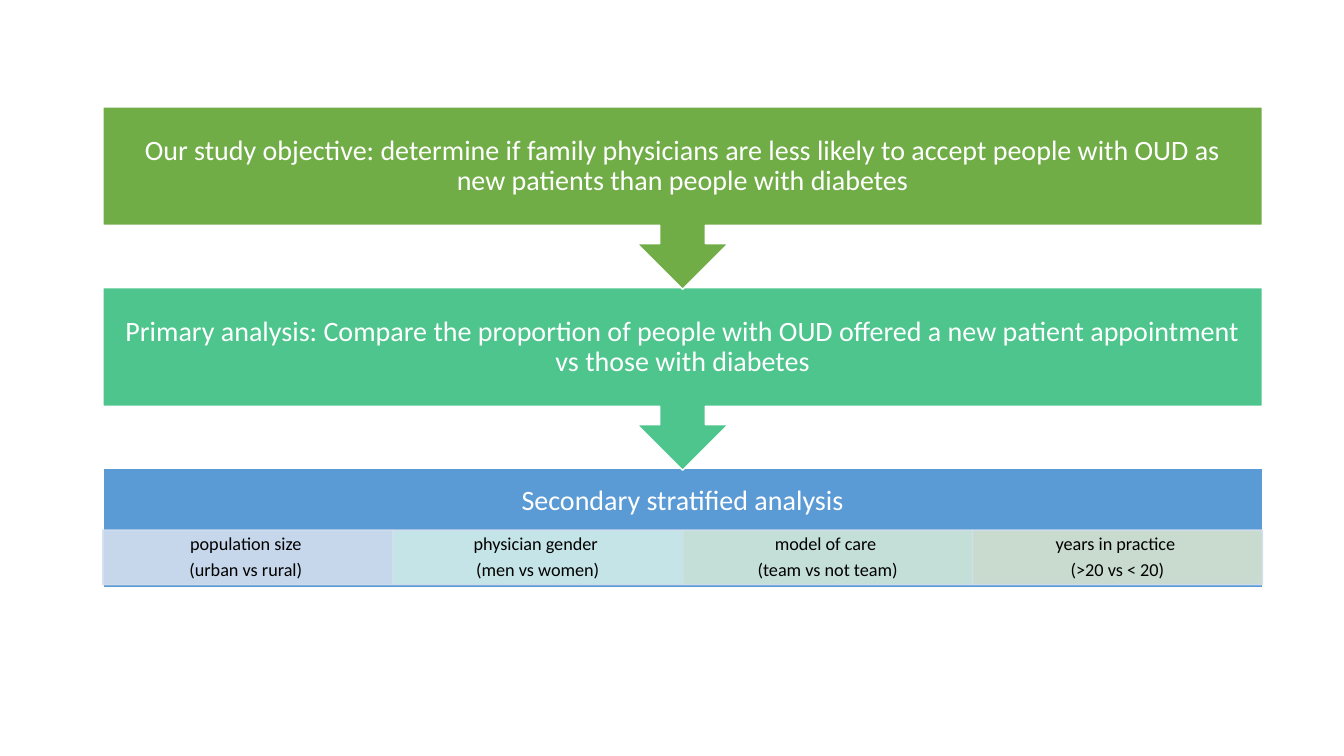
from lxml import etree
from pptx import Presentation
from pptx import util as u
from pptx.dml import color
from pptx.enum import shapes, text
from pptx.oxml import ns

STAGE_HEIGHT = 1.18
CALLOUT_HEIGHT = 1.81
STRATUM_TOP = 0.61
STRATUM_HEIGHT = 0.54

STAGES = [
    ("Our study objective: determine if family physicians are less likely to accept "
     "people with OUD as new patients than people with diabetes", "70AD47"),
    ("Primary analysis: Compare the proportion of people with OUD offered a new "
     "patient appointment vs those with diabetes", "4DC58D"),
]
STRATA = [
    ("population size ", "(urban vs rural) ", "D2DEEF"),
    ("physician gender ", "(men vs women)", "D0ECEA"),
    ("model of care ", "(team vs not team)", "D0E7D8"),
    ("years in practice ", "(>20 vs < 20)", "D5E3CF"),
]


def paint(target, hex_color, opacity=100):
    """Set a solid colour, with opacity in percent, on a fill."""
    target.solid()
    target.fore_color.rgb = color.RGBColor.from_string(hex_color)
    if opacity < 100:
        for solid_color in target._xPr.iter(ns.qn("a:srgbClr")):
            if solid_color.getparent().getparent() is target._xPr:
                alpha = etree.SubElement(solid_color, ns.qn("a:alpha"))
                alpha.set("val", str(opacity * 1000))


def add_block(slide, kind, box, fill, line="FFFFFF", opacity=100):
    """Add a filled and outlined preset shape in a box given in inches."""
    shape = slide.shapes.add_shape(kind, *(u.Inches(length) for length in box))
    shape.shadow.inherit = False
    paint(shape.fill, fill, opacity)
    shape.line.width = u.Pt(1)
    paint(shape.line.fill, line, opacity)
    return shape


def write(shape, *lines, size=20, ink="FFFFFF", side=0.16, top=0.16, bottom=0.16):
    """Write centred paragraphs in a shape."""
    frame = shape.text_frame
    frame.word_wrap = True
    frame.vertical_anchor = text.MSO_ANCHOR.MIDDLE
    frame.margin_left = frame.margin_right = u.Inches(side)
    frame.margin_top, frame.margin_bottom = u.Inches(top), u.Inches(bottom)
    for index, line in enumerate(lines):
        paragraph = frame.add_paragraph() if index else frame.paragraphs[0]
        paragraph.alignment = text.PP_ALIGN.CENTER
        paragraph.line_spacing = 0.9
        paragraph.space_after = u.Pt(round(size * 0.35, 1))
        run = paragraph.add_run()
        run.text = line
        run.font.name = "Calibri"
        run.font.size = u.Pt(size)
        paint(run.font.fill, ink)


def add_stage(slide, box, wording, fill):
    """Add one step whose arrow leads down to the next."""
    callout = add_block(slide, shapes.MSO_SHAPE.DOWN_ARROW_CALLOUT, box, fill)
    write(callout, wording)


def add_secondary(slide, box):
    """Add the final step with its row of strata."""
    left, top, width, height = box
    panel = add_block(slide, shapes.MSO_SHAPE.RECTANGLE, box, "5B9BD5")
    write(panel, "Secondary stratified analysis", bottom=0.7)
    column = width / len(STRATA)
    for index, (name, groups, fill) in enumerate(STRATA):
        cell = (left + index * column, top + STRATUM_TOP, column, STRATUM_HEIGHT)
        stratum = add_block(slide, shapes.MSO_SHAPE.RECTANGLE, cell, fill, "D2DEEF", 90)
        write(stratum, name, groups, size=13, ink="000000", side=0.1, top=0.02, bottom=0.02)


def add_flow(slide, box):
    """Stack the steps at equal distances, the last one at the back."""
    left, top, width, height = box
    pitch = (height - STAGE_HEIGHT) / len(STAGES)
    add_secondary(slide, (left, top + len(STAGES) * pitch, width, STAGE_HEIGHT))
    for index, (wording, fill) in reversed(list(enumerate(STAGES))):
        add_stage(slide, (left, top + index * pitch, width, CALLOUT_HEIGHT), wording, fill)


def main():
    """Build and save the slide."""
    presentation = Presentation()
    presentation.slide_width, presentation.slide_height = u.Inches(13.33), u.Inches(7.5)
    slide = presentation.slides.add_slide(presentation.slide_layouts[6])
    add_flow(slide, (1.02, 1.06, 11.5, 4.77))
    presentation.save("out.pptx")


if __name__ == "__main__":
    main()
